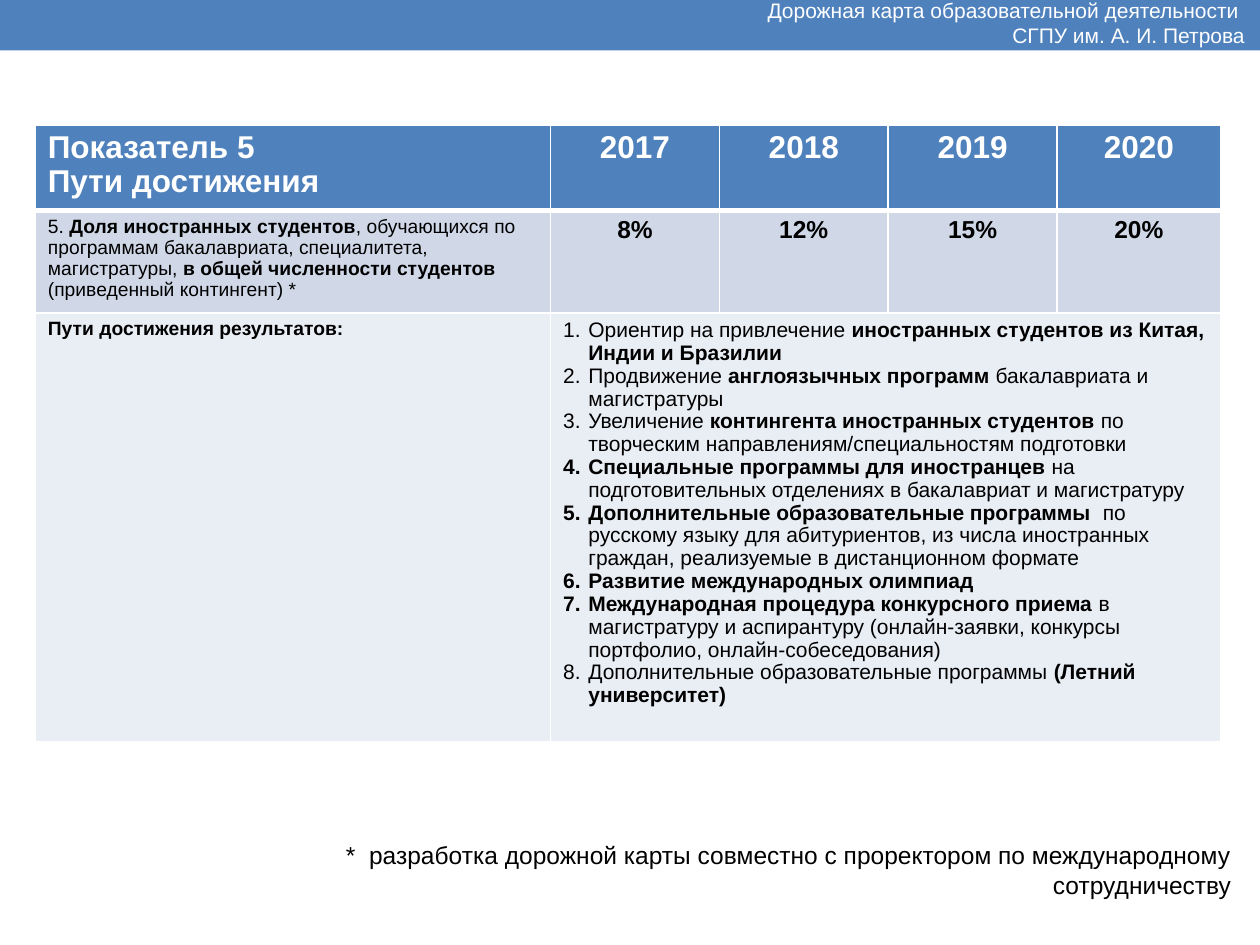
from lxml import etree
from pptx import Presentation
from pptx.dml.color import RGBColor
from pptx.enum.shapes import MSO_SHAPE
from pptx.enum.text import MSO_ANCHOR, PP_ALIGN
from pptx.oxml.ns import qn
from pptx.util import Inches, Pt

LEFT, CENTER, RIGHT = PP_ALIGN.LEFT, PP_ALIGN.CENTER, PP_ALIGN.RIGHT
TOP, MIDDLE = MSO_ANCHOR.TOP, MSO_ANCHOR.MIDDLE
FONT = "Arial"
BLUE, WHITE, BLACK = "4F81BD", "FFFFFF", "000000"
ROW_FILLS = [BLUE, "D0D8E8", "E9EDF4"]
COL_WIDTHS = [4.09, 1.34, 1.34, 1.34, 1.3]
ROW_HEIGHTS = [0.65, 0.77, 3.26]
LINE_SPACING = 0.97

TITLE = ["Дорожная карта образовательной деятельности ", "СГПУ им. А. И. Петрова"]
HEADING = ["**Показатель 5**", "**Пути достижения**"]
TARGETS = {"2017": "8%", "2018": "12%", "2019": "15%", "2020": "20%"}
INDICATOR = (
    "5. **Доля иностранных студентов**, обучающихся по программам бакалавриата, "
    "специалитета, магистратуры, **в общей численности студентов **"
    "(приведенный контингент) *"
)
WAYS_LABEL = "**Пути достижения результатов:**"
WAYS = [
    "Ориентир на привлечение **иностранных студентов из Китая, Индии и Бразилии**",
    "Продвижение** англоязычных программ **бакалавриата и магистратуры",
    "Увеличение** контингента иностранных студентов **по творческим "
    "направлениям/специальностям подготовки",
    "**Специальные программы для иностранцев **на подготовительных отделениях "
    "в бакалавриат и магистратуру",
    "**Дополнительные образовательные программы  **по русскому языку для абитуриентов, "
    "из числа иностранных граждан, реализуемые в дистанционном формате",
    "**Развитие международных олимпиад**",
    "**Международная процедура конкурсного приема **в магистратуру и аспирантуру "
    "(онлайн-заявки, конкурсы портфолио, онлайн-собеседования)",
    "Дополнительные образовательные программы **(Летний университет)**",
]
FOOTNOTE = (
    "*  разработка дорожной карты совместно с проректором по международному сотрудничеству"
)


def rgb(color):
    return RGBColor.from_string(color)


def write(tf, lines, size, color=BLACK, align=LEFT, spacing=None):
    for i, line in enumerate(lines):
        p = tf.add_paragraph() if i else tf.paragraphs[0]
        p.alignment, p.line_spacing = align, spacing
        for j, part in enumerate(line.split("**")):
            if part:
                r = p.add_run()
                r.text = part
                r.font.name, r.font.size, r.font.bold = FONT, Pt(size), j % 2 == 1
                r.font.color.rgb = rgb(color)


def add_text(s, box, lines, size, color, anchor):
    tf = s.shapes.add_textbox(*map(Inches, box)).text_frame
    tf.word_wrap, tf.vertical_anchor = True, anchor
    write(tf, lines, size, color, RIGHT)


def number(tf, indent):
    for p in tf.paragraphs:
        pPr = p._p.get_or_add_pPr()
        pPr.set("marL", str(Inches(indent)))
        pPr.set("indent", str(-Inches(indent)))
        font = etree.SubElement(pPr, qn("a:buFont"))
        font.set("typeface", FONT)
        etree.SubElement(pPr, qn("a:buAutoNum")).set("type", "arabicPeriod")


def set_borders(cell, widths):
    tcPr = cell._tc.get_or_add_tcPr()
    for i, (side, width) in enumerate(widths.items()):
        ln = etree.Element(qn("a:" + side), w=str(Pt(width)))
        fill = etree.SubElement(ln, qn("a:solidFill"))
        etree.SubElement(fill, qn("a:srgbClr")).set("val", WHITE)
        tcPr.insert(i, ln)


def add_table(s):
    shape = s.shapes.add_table(
        len(ROW_HEIGHTS), len(COL_WIDTHS), Inches(0.28), Inches(0.99),
        Inches(sum(COL_WIDTHS)), Inches(sum(ROW_HEIGHTS)),
    )
    table = shape.table
    for col, width in zip(table.columns, COL_WIDTHS):
        col.width = Inches(width)
    for row, height in zip(table.rows, ROW_HEIGHTS):
        row.height = Inches(height)
    for i, fill in enumerate(ROW_FILLS):
        for cell in table.rows[i].cells:
            cell.fill.solid()
            cell.fill.fore_color.rgb = rgb(fill)
            set_borders(cell, {"lnL": 1, "lnR": 1, "lnT": 3 if i == 1 else 1,
                               "lnB": 3 if i == 0 else 1})
    table.cell(2, 1).merge(table.cell(2, len(COL_WIDTHS) - 1))

    def put(row, col, lines, size, color=BLACK, align=LEFT):
        tf = table.cell(row, col).text_frame
        write(tf, lines, size, color, align, LINE_SPACING)
        return tf

    put(0, 0, HEADING, 18, WHITE)
    put(1, 0, [INDICATOR], 11)
    put(2, 0, [WAYS_LABEL], 11)
    for col, (year, share) in enumerate(TARGETS.items(), 1):
        put(0, col, [f"**{year}**"], 18, WHITE, CENTER)
        put(1, col, [f"**{share}**"], 14, BLACK, CENTER)
    number(put(2, 1, WAYS, 12), 0.2)


def main():
    prs = Presentation()
    prs.slide_width, prs.slide_height = Inches(10), Inches(7.5)
    s = prs.slides.add_slide(prs.slide_layouts[6])
    band = s.shapes.add_shape(MSO_SHAPE.RECTANGLE, 0, 0, prs.slide_width, Inches(0.4))
    band.shadow.inherit = False
    band.fill.solid()
    band.fill.fore_color.rgb = rgb(BLUE)
    band.line.fill.background()
    add_text(s, (5.48, 0, 4.5, 0.36), TITLE, 12, WHITE, MIDDLE)
    add_table(s)
    add_text(s, (1.21, 6.62, 8.66, 0.34), [FOOTNOTE], 14, BLACK, TOP)
    prs.save("out.pptx")


if __name__ == "__main__":
    main()
